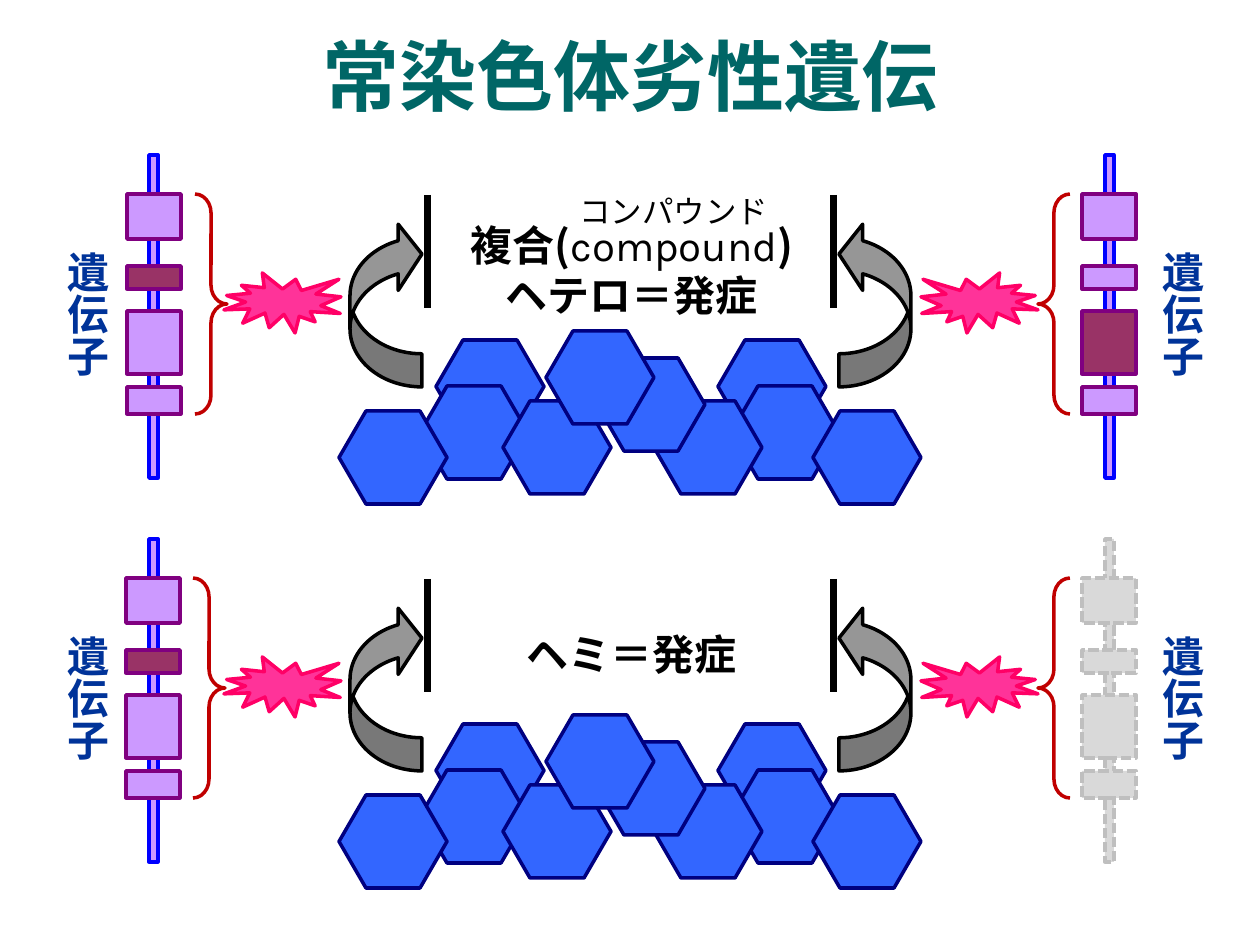
import lxml.etree
import pptx
import pptx.dml.color
import pptx.enum.dml
import pptx.enum.shapes
import pptx.enum.text
import pptx.oxml.ns
import pptx.util

EMU_PER_PX = 914400 // 126
SHAPE = pptx.enum.shapes.MSO_SHAPE
ALIGN = pptx.enum.text.PP_ALIGN
JAPANESE, LATIN = "Noto Sans CJK JP", "Karla"
BLACK, NAVY, TEAL = "000000", "003399", "006666"
LILAC, PLUM, PALE_GRAY = "CC99FF", "993366", "D9D9D9"
ROW_STEP = 384

# Top and height of each exon; each hexagon has a left and a top
EXONS = [(194, 45), (266, 23), (311, 63), (387, 27)]
LEFT = dict(rod=149, exon=127, brace=195, arrow=350, label=49, burst=224, bar=428,
            hexagons=[(436, 340), (420, 386), (503, 401), (546, 331), (339, 411)])
RIGHT = dict(rod=1105, exon=1082, brace=1038, arrow=839, label=1144, burst=921, bar=834,
             hexagons=[(718, 340), (731, 386), (654, 401), (597, 358), (813, 411)])


def px(length):
    return pptx.util.Emu(length * EMU_PER_PX)


def color(value):
    return pptx.dml.color.RGBColor.from_string(value)


def add_text(paragraph, text, size=24, font=JAPANESE, fill=BLACK, bold=True):
    run = paragraph.add_run()
    run.text = text
    run.font.size = pptx.util.Pt(size)
    run.font.bold = bold
    run.font.color.rgb = color(fill)
    run.font.name = font
    east_asian = lxml.etree.SubElement(run.font._element, pptx.oxml.ns.qn("a:ea"))
    east_asian.set("typeface", font)


class GeneSlide:
    """Holds the current slide and the style of its elements."""

    def __init__(self, presentation):
        self.slide = presentation.slides.add_slide(presentation.slide_layouts[5])

    def title(self, text, left, top, width, height):
        shape = self.slide.shapes.title
        shape.left, shape.top, shape.width, shape.height = map(px, (left, top, width, height))
        shape.text_frame.vertical_anchor = pptx.enum.text.MSO_ANCHOR.MIDDLE
        paragraph = shape.text_frame.paragraphs[0]
        paragraph.alignment = ALIGN.CENTER
        add_text(paragraph, text, size=44, fill=TEAL)

    def shape(self, kind, box, fill, line, flip="", adjustments=(), dashed=False):
        shape = self.slide.shapes.add_shape(kind, *map(px, box))
        shape.shadow.inherit = False
        if fill:
            shape.fill.solid()
            shape.fill.fore_color.rgb = color(fill)
        else:
            shape.fill.background()
        shape.line.color.rgb = color(line)
        shape.line.width = pptx.util.Pt(2)
        if dashed:
            shape.line.dash_style = pptx.enum.dml.MSO_LINE.SQUARE_DOT
        for index, value in enumerate(adjustments):
            shape.adjustments[index] = value
        for axis in flip:
            shape._element.spPr.xfrm.set("flip" + axis, "1")
        return shape

    def text_box(self, box, paragraphs, wrap=True, align=None, vertical=False):
        shape = self.slide.shapes.add_textbox(*map(px, box))
        frame = shape.text_frame
        frame.word_wrap = wrap
        frame.auto_size = pptx.enum.text.MSO_AUTO_SIZE.SHAPE_TO_FIT_TEXT
        if vertical:
            frame._txBody.bodyPr.set("vert", "eaVert")
        for index, runs in enumerate(paragraphs):
            paragraph = frame.add_paragraph() if index else frame.paragraphs[0]
            paragraph.alignment = align
            for text, style in runs:
                add_text(paragraph, text, **style)

    def bar(self, x, top, bottom):
        connector = self.slide.shapes.add_connector(
            pptx.enum.shapes.MSO_CONNECTOR.STRAIGHT, px(x), px(top), px(x), px(bottom))
        connector.line.color.rgb = color(BLACK)
        connector.line.width = pptx.util.Pt(4)
        lxml.etree.SubElement(connector._element.spPr, pptx.oxml.ns.qn("a:effectLst"))

    def hexagon(self, left, top, flip):
        self.shape(SHAPE.HEXAGON, (left, top, 108, 93), "3366FF", "000080",
                   flip, (0.29, 1.155))

    def gene(self, side, down, flip, mutated, missing, shift):
        """Draw the rod, its exons and the brace; one exon may be mutated."""
        rod_line, exon_line = ("BFBFBF", "BFBFBF") if missing else ("0000FF", "800080")
        plain = PALE_GRAY if missing else LILAC
        self.shape(SHAPE.RECTANGLE, (side["rod"], 155 + down, 9, 323),
                   plain, rod_line, flip, dashed=missing)
        for index, (top, height) in enumerate(EXONS):
            self.shape(SHAPE.RECTANGLE, (side["exon"] - shift, top + down, 54, height),
                       PLUM if index == mutated else plain, exon_line, flip, dashed=missing)
        self.shape(SHAPE.RIGHT_BRACE, (side["brace"] - 2 * shift, 194 + down, 32, 220),
                   None, "C00000", flip, (0.59, 0.5))

    def half(self, side, down, mirrored, mutated=None, missing=False, shift=0):
        """Draw one allele with its protein and blocked arrow."""
        flip = "H" if mirrored else ""
        self.gene(side, down, flip, mutated, missing, shift)
        back, *front = side["hexagons"]
        self.hexagon(back[0], back[1] + down, flip)
        self.shape(SHAPE.CURVED_RIGHT_ARROW, (side["arrow"], 221 + down, 72, 166),
                   "969696", BLACK, flip + "V", (0.46, 0.92, 0.33))
        self.text_box((side["label"], 239 + down, 69, 125),
                      [[("遺伝子", dict(fill=NAVY))]], wrap=False, vertical=True)
        self.shape(SHAPE.EXPLOSION1, (side["burst"], 273 + down, 117, 60),
                   "FF3399", "FF0066", "" if mirrored else "H")
        for left, top in front:
            self.hexagon(left, top + down, flip)
        self.bar(side["bar"], 195 + down, 308 + down)


def main():
    presentation = pptx.Presentation()
    presentation.slide_width = px(1260)
    presentation.slide_height = px(945)
    page = GeneSlide(presentation)
    page.title("常染色体劣性遺伝", 35, 25, 1191, 100)

    # Compound heterozygote: a different mutation in each allele
    page.half(RIGHT, 0, True, mutated=2)
    page.half(LEFT, 0, False, mutated=1)
    page.text_box((436, 213, 392, 115), [
        [("複合(", {}), ("compound", dict(font=LATIN, bold=False)), (")", {})],
        [("ヘテロ＝発症", {})],
    ], align=ALIGN.CENTER)

    # Hemizygote: one mutated allele, the other one missing
    page.half(RIGHT, ROW_STEP, True, missing=True)
    page.half(LEFT, ROW_STEP, False, mutated=1, shift=1)
    page.text_box((436, 622, 392, 64), [[("ヘミ＝発症", {})]], align=ALIGN.CENTER)

    # Reading of the word "compound"
    page.text_box((567, 186, 217, 50), [[("コンパウンド", dict(size=18, bold=False))]],
                  wrap=False)
    presentation.save("out.pptx")


if __name__ == "__main__":
    main()
